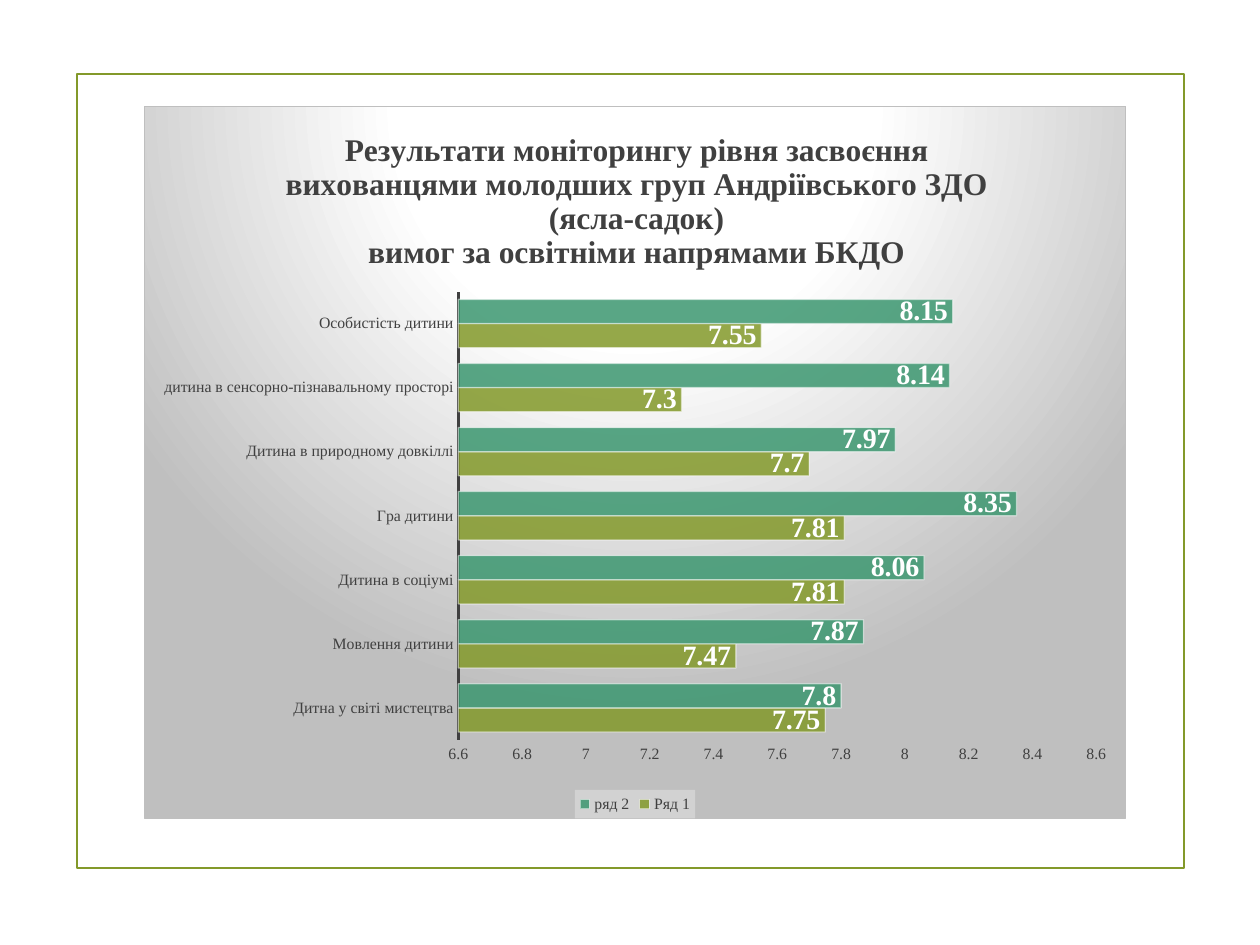
"""Build a slide with a framed bar chart of monitoring results."""
from pptx import Presentation
from pptx import util as u
from pptx.chart import data
from pptx.dml.color import RGBColor
from pptx.enum import chart as kinds, shapes
from pptx.oxml import parse_xml
from pptx.oxml.ns import nsdecls, qn

OLIVE = RGBColor(0x83, 0x99, 0x2A)
GREEN = RGBColor(0x3C, 0x97, 0x70)
WHITE = RGBColor(0xFF, 0xFF, 0xFF)
DARK = RGBColor(0x40, 0x40, 0x40)
BLACK = RGBColor(0, 0, 0)
FACE = "Times New Roman"

HEAD = [
    "Результати моніторингу рівня засвоєння вихованцями молодших груп "
    "Андріївського ЗДО (ясла-садок)",
    "вимог за освітніми напрямами БКДО",
]
ROWS = [
    ("Дитна у світі мистецтва", 7.75, 7.8),
    ("Мовлення дитини", 7.47, 7.87),
    ("Дитина в соціумі", 7.81, 8.06),
    ("Гра дитини", 7.81, 8.35),
    ("Дитина в природному довкіллі", 7.7, 7.97),
    ("дитина в сенсорно-пізнавальному просторі", 7.3, 8.14),
    ("Особистість дитини", 7.55, 8.15),
]
SERIES = [("Ряд 1", OLIVE), ("ряд 2", GREEN)]


def style(item, **values):
    """Set each named value on an item."""
    for name, value in values.items():
        setattr(item, name, value)


def write(font, size, color, bold=False):
    """Format a font."""
    style(font, name=FACE, size=u.Pt(size), bold=bold)
    font.color.rgb = color


def paint(fmt, color, edge, width):
    """Give a format a solid fill and an outline."""
    fmt.fill.solid()
    fmt.fill.fore_color.rgb = color
    fmt.line.color.rgb = edge
    fmt.line.width = u.Pt(width)


def place(owner, after, **spots):
    """Set a manual layout on a chart part."""
    for old in owner.findall(qn("c:layout")):
        owner.remove(old)
    marks = "".join(f'<c:{key} val="{val}"/>' for key, val in spots.items())
    node = parse_xml(f'<c:layout {nsdecls("c")}><c:manualLayout>{marks}'
                     '</c:manualLayout></c:layout>')
    if after is None:
        owner.insert(0, node)
    else:
        after.addnext(node)


def shade(node, fill):
    """Put shape properties after a chart node."""
    node.addnext(parse_xml(f'<c:spPr {nsdecls("c", "a")}>{fill}</c:spPr>'))


def add_frame(slide):
    """Draw the border around the content."""
    box = slide.shapes.add_shape(
        shapes.MSO_SHAPE.RECTANGLE, u.Inches(0.61), u.Inches(0.59),
        u.Inches(8.79), u.Inches(6.3))
    box.shadow.inherit = False
    box.fill.background()
    box.line.color.rgb = OLIVE
    box.line.width = u.Pt(1.25)


def set_title(chart):
    """Write and place the chart title."""
    frame = chart.chart_title.text_frame
    frame.text = "\n".join(HEAD)
    for para in frame.paragraphs:
        write(para.font, 18, DARK, True)
        for run in para.runs:
            write(run.font, 18, DARK, True)
    chart.chart_title.include_in_layout = False
    title = chart.element.find(".//" + qn("c:title"))
    place(title, title.find(qn("c:tx")), xMode="edge", yMode="edge",
          x=0.14, y=0.03)


def set_axes(chart):
    """Format both axes."""
    for axis in (chart.category_axis, chart.value_axis):
        style(axis, has_major_gridlines=False,
              major_tick_mark=kinds.XL_TICK_MARK.NONE,
              minor_tick_mark=kinds.XL_TICK_MARK.NONE)
        write(axis.tick_labels.font, 9, DARK)
    line = chart.category_axis.format.line
    line.color.rgb = DARK
    line.width = u.Pt(1.5)
    style(chart.value_axis, minimum_scale=6.6, maximum_scale=8.6,
          major_unit=0.2)
    chart.value_axis.format.line.fill.background()


def set_bars(chart):
    """Format the bars and their labels."""
    plot = chart.plots[0]
    style(plot, gap_width=65, overlap=0, vary_by_categories=False)
    for bars, (_, color) in zip(plot.series, SERIES):
        bars.invert_if_negative = False
        paint(bars.format, color, WHITE, 0.75)
        tags = bars.data_labels
        style(tags, show_value=True,
              position=kinds.XL_LABEL_POSITION.INSIDE_END)
        write(tags.font, 16, WHITE, True)
    for node in chart.element.iter(qn("c:ser")):
        hues = node.find(qn("c:spPr")).iter(qn("a:srgbClr"))
        for hue, part in zip(list(hues), (85000, 50000)):
            hue.append(parse_xml(f'<a:alpha {nsdecls("a")} val="{part}"/>'))


def set_legend(chart):
    """Put the legend on a pale panel below the plot."""
    chart.has_legend = True
    style(chart.legend, position=kinds.XL_LEGEND_POSITION.BOTTOM,
          include_in_layout=False)
    write(chart.legend.font, 9, DARK)
    over = chart.element.find(".//" + qn("c:legend")).find(qn("c:overlay"))
    shade(over, '<a:solidFill><a:srgbClr val="F2F2F2"><a:alpha val="39000"/>'
                '</a:srgbClr></a:solidFill>')


def set_back(chart):
    """Give the chart its radial gradient and border."""
    stops = "".join(
        f'<a:gs pos="{pos}000"><a:srgbClr val="{hue}"/></a:gs>'
        for pos, hue in ((0, WHITE), (39, WHITE), (100, "BFBFBF")))
    shade(chart.element.find(qn("c:chart")),
          f'<a:gradFill><a:gsLst>{stops}</a:gsLst><a:path path="circle">'
          '<a:fillToRect l="50000" t="-80000" r="50000" b="180000"/></a:path>'
          '</a:gradFill><a:ln w="9525"><a:solidFill><a:srgbClr val="BFBFBF"/>'
          '</a:solidFill></a:ln>')


def add_bars(slide):
    """Add the bar chart."""
    info = data.CategoryChartData()
    info.categories = [row[0] for row in ROWS]
    for col, (name, _) in enumerate(SERIES, 1):
        info.add_series(name, [row[col] for row in ROWS])
    chart = slide.shapes.add_chart(
        kinds.XL_CHART_TYPE.BAR_CLUSTERED, u.Inches(1.14), u.Inches(0.84),
        u.Inches(7.8), u.Inches(5.66), info).chart
    write(chart.font, 10, BLACK)
    set_title(chart)
    set_axes(chart)
    set_bars(chart)
    set_legend(chart)
    set_back(chart)
    area = chart.element.find(".//" + qn("c:plotArea"))
    place(area, None, layoutTarget="inner", xMode="edge", yMode="edge",
          x=0.32, y=0.26, w=0.65, h=0.63)


def main():
    """Build and save the slide."""
    deck = Presentation()
    style(deck, slide_width=u.Inches(10), slide_height=u.Inches(7.5))
    slide = deck.slides.add_slide(deck.slide_layouts[6])
    add_frame(slide)
    add_bars(slide)
    deck.save("out.pptx")


if __name__ == "__main__":
    main()
